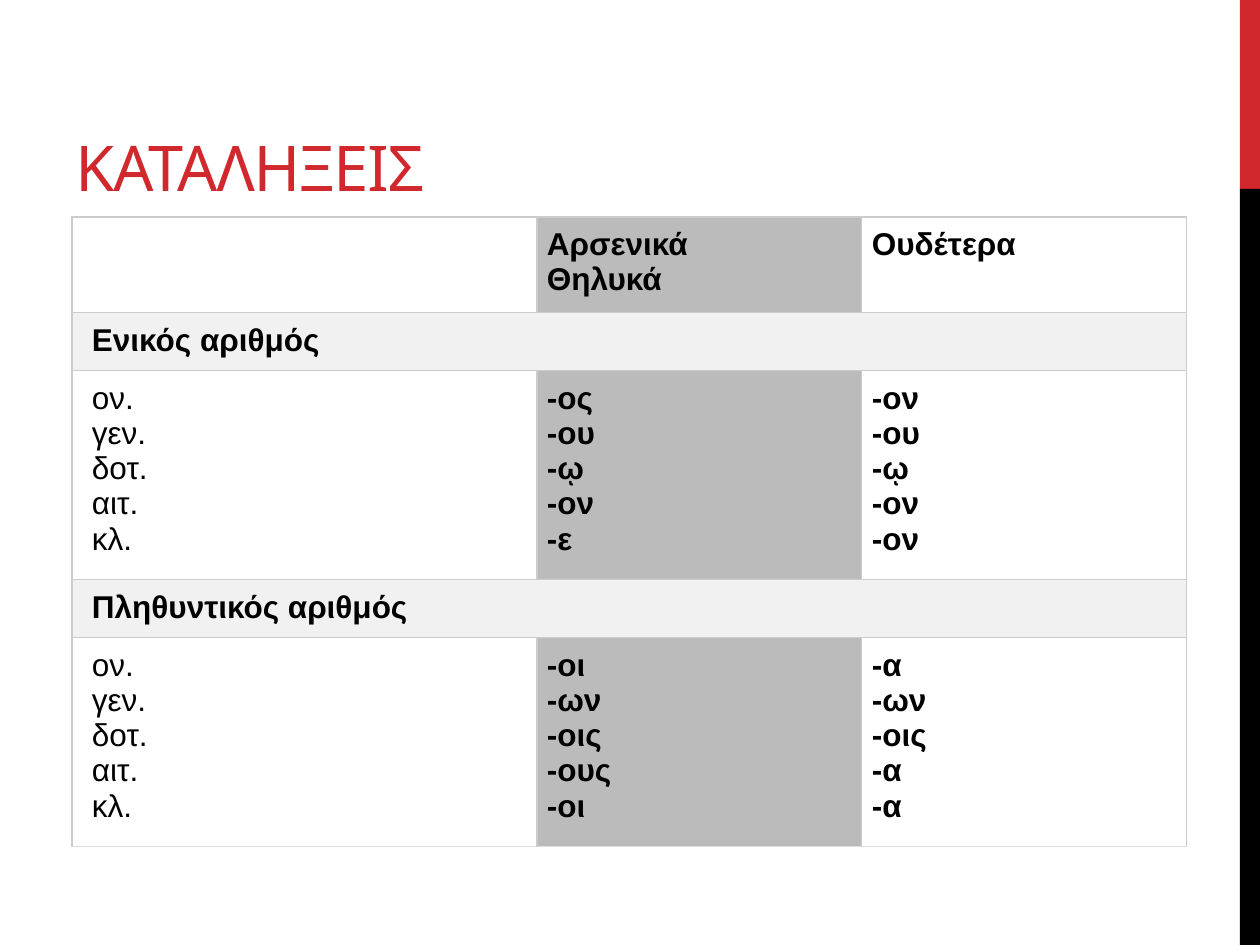
from lxml.etree import SubElement
from pptx import Presentation
from pptx.dml.color import RGBColor
from pptx.enum.shapes import MSO_SHAPE
from pptx.enum.text import MSO_ANCHOR
from pptx.oxml import parse_xml
from pptx.oxml.ns import nsdecls
from pptx.util import Pt

PX = 914400 // 126
RED, BLACK, WHITE = "D1282E", "000000", "FFFFFF"
GRAY, LIGHT, BORDER, BOTTOM_BORDER = "BBBBBB", "F1F1F1", "CCCCCC", "DDDDDD"


def color(value):
    return RGBColor.from_string(value)


def set_borders(cell, bottom_color):
    properties = cell._tc.get_or_add_tcPr()
    for index, side in enumerate("LRTB"):
        value = bottom_color if side == "B" else BORDER
        properties.insert(index, parse_xml(
            f'<a:ln{side} {nsdecls("a")} w="9525"><a:solidFill>'
            f'<a:srgbClr val="{value}"/></a:solidFill></a:ln{side}>'))


presentation = Presentation()
presentation.slide_width = 1260 * PX
presentation.slide_height = 945 * PX
slide = presentation.slides.add_slide(presentation.slide_layouts[6])

for top, height, fill in [(0, 189, RED), (189, 756, BLACK)]:
    bar = slide.shapes.add_shape(
        MSO_SHAPE.RECTANGLE, 1240 * PX, top * PX, 20 * PX, height * PX)
    bar.shadow.inherit = False
    bar.fill.solid()
    bar.fill.fore_color.rgb = color(fill)
    bar.line.fill.background()

title = slide.shapes.add_textbox(63 * PX, 21 * PX, 798 * PX, 189 * PX)
title.text_frame.word_wrap = True
title.text_frame.vertical_anchor = MSO_ANCHOR.BOTTOM
paragraph = title.text_frame.paragraphs[0]
run = paragraph.add_run()
run.text = "ΚΑΤΑΛΗΞΕΙΣ"
run.font.size = Pt(36)
run.font.name = "Montserrat"
run.font.color.rgb = color(RED)
run._r.get_or_add_rPr().set("spc", "-60")

cases = "ον. γεν. δοτ. αιτ. κλ."
rows = [
    (94, ["", "Αρσενικά Θηλυκά", "Ουδέτερα"]),
    (58, ["Ενικός αριθμός"]),
    (206, [cases, "-ος -ου -ῳ -ον -ε", "-ον -ου -ῳ -ον -ον"]),
    (58, ["Πληθυντικός αριθμός"]),
    (206, [cases, "-οι -ων -οις -ους -οι", "-α -ων -οις -α -α"]),
]
column_widths = [465, 325, 325]
table_height = sum(height for height, texts in rows)
table = slide.shapes.add_table(
    len(rows), len(column_widths), 72 * PX, 217 * PX,
    sum(column_widths) * PX, table_height * PX).table
table.first_row = False
table.horz_banding = False
for column, width in zip(table.columns, column_widths):
    column.width = width * PX

for row_index, (height, texts) in enumerate(rows):
    table.rows[row_index].height = height * PX
    is_heading = len(texts) == 1
    if is_heading:
        table.cell(row_index, 0).merge(table.cell(row_index, 2))
    fills = [LIGHT] * 3 if is_heading else [WHITE, GRAY, WHITE]
    bottom_color = BOTTOM_BORDER if row_index == len(rows) - 1 else BORDER
    for column_index, fill in enumerate(fills):
        cell = table.cell(row_index, column_index)
        cell.fill.solid()
        cell.fill.fore_color.rgb = color(fill)
        set_borders(cell, bottom_color)
        cell.margin_left = (20 if column_index == 0 else 10) * PX
        cell.margin_right = cell.margin_top = cell.margin_bottom = 10 * PX
        if column_index < len(texts):
            text = texts[column_index]
            paragraph = cell.text_frame.paragraphs[0]
            paragraph.text = text if is_heading else text.replace(" ", "\v")
            paragraph.font.size = Pt(18)
            paragraph.font.name = "Arial"
            paragraph.font.bold = text != cases
            paragraph.font.color.rgb = color(BLACK)

presentation.save("out.pptx")
